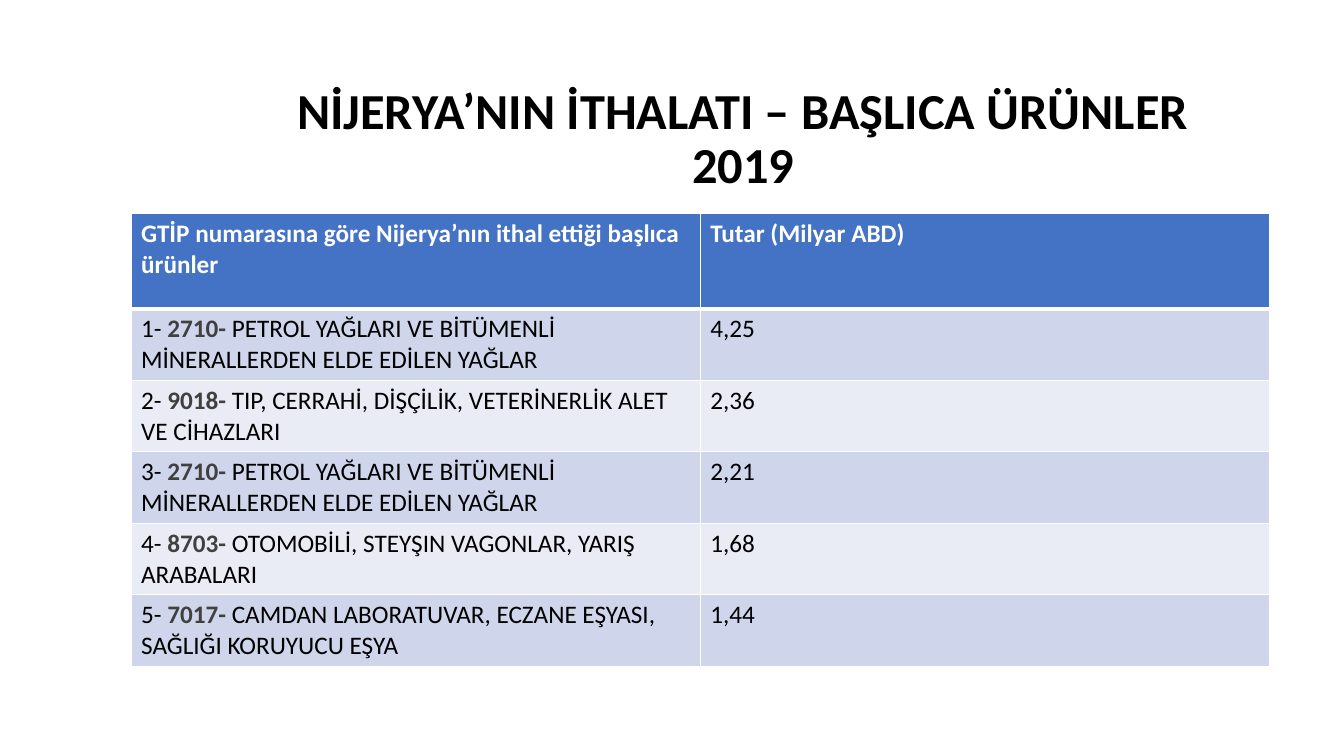
from dataclasses import dataclass

from lxml.etree import SubElement
from pptx import Presentation
from pptx.dml.color import RGBColor
from pptx.enum.text import MSO_ANCHOR, PP_ALIGN
from pptx.oxml.ns import qn
from pptx.util import Inches, Pt

PAGE_WIDTH, PAGE_HEIGHT = Inches(13.33), Inches(7.5)


@dataclass(frozen=True)
class Theme:
    font: str = "Calibri"
    title_size: int = 36
    table_size: int = 18
    ink: str = "000000"
    code_ink: str = "404040"
    white: str = "FFFFFF"
    header_fill: str = "4472C4"
    bands: tuple[str, str] = ("CFD5EA", "E9EBF5")
    border: int = 1
    header_border: int = 3


@dataclass(frozen=True)
class Area:
    """A rectangle in shares of the slide's width and height."""
    left: float
    top: float
    width: float
    height: float

    def lengths(self) -> tuple[int, int, int, int]:
        return (int(self.left * PAGE_WIDTH), int(self.top * PAGE_HEIGHT),
                int(self.width * PAGE_WIDTH), int(self.height * PAGE_HEIGHT))


@dataclass(frozen=True)
class Product:
    code: str
    name: str
    amount: str


THEME = Theme()
TITLE_AREA = Area(0.1718, 0.1067, 0.7622, 0.12)
TABLE_AREA = Area(0.0975, 0.2827, 0.847, 0.5987)
HEADER_SHARE = 0.21  # of the table's height

TITLE = "NİJERYA’NIN İTHALATI – BAŞLICA ÜRÜNLER 2019"
HEADINGS = ("GTİP numarasına göre Nijerya’nın ithal ettiği başlıca ürünler",
            "Tutar (Milyar ABD)")
OILS = "PETROL YAĞLARI VE BİTÜMENLİ MİNERALLERDEN ELDE EDİLEN YAĞLAR"
PRODUCTS = (
    Product("2710", OILS, "4,25"),
    Product("9018", "TIP, CERRAHİ, DİŞÇİLİK, VETERİNERLİK ALET VE CİHAZLARI", "2,36"),
    Product("2710", OILS, "2,21"),
    Product("8703", "OTOMOBİLİ, STEYŞIN VAGONLAR, YARIŞ ARABALARI", "1,68"),
    Product("7017", "CAMDAN LABORATUVAR, ECZANE EŞYASI, SAĞLIĞI KORUYUCU EŞYA", "1,44"),
)


def add_text(para, text: str, *, size: int = THEME.table_size,
             color: str = THEME.ink, bold: bool = False) -> None:
    span = para.add_run()
    span.text = text
    span.font.name = THEME.font
    span.font.size = Pt(size)
    span.font.bold = bold
    span.font.color.rgb = RGBColor.from_string(color)


def style_cell(cell, fill: str, top: int, bottom: int) -> None:
    properties = cell._tc.get_or_add_tcPr()
    edges = {"lnL": THEME.border, "lnR": THEME.border, "lnT": top, "lnB": bottom}
    for edge, points in edges.items():
        line = SubElement(properties, qn(f"a:{edge}"), w=str(Pt(points)))
        solid = SubElement(line, qn("a:solidFill"))
        SubElement(solid, qn("a:srgbClr"), val=THEME.white)
    cell.fill.solid()
    cell.fill.fore_color.rgb = RGBColor.from_string(fill)


def add_title(page) -> None:
    frame = page.shapes.add_textbox(*TITLE_AREA.lengths()).text_frame
    frame.word_wrap = True
    frame.vertical_anchor = MSO_ANCHOR.TOP
    para = frame.paragraphs[0]
    para.alignment = PP_ALIGN.CENTER
    para.line_spacing = 0.9
    add_text(para, TITLE, size=THEME.title_size, bold=True)


def add_product_table(page) -> None:
    left, top, width, height = TABLE_AREA.lengths()
    table = page.shapes.add_table(len(PRODUCTS) + 1, len(HEADINGS),
                                  left, top, width, height).table
    header_height = int(height * HEADER_SHARE)
    table.rows[0].height = header_height
    for row in list(table.rows)[1:]:
        row.height = (height - header_height) // len(PRODUCTS)

    # Header row
    for column, heading in enumerate(HEADINGS):
        cell = table.cell(0, column)
        style_cell(cell, THEME.header_fill, THEME.border, THEME.header_border)
        add_text(cell.text_frame.paragraphs[0], heading, color=THEME.white, bold=True)

    # Banded product rows
    for number, product in enumerate(PRODUCTS, start=1):
        name_cell, amount_cell = table.cell(number, 0), table.cell(number, 1)
        edge = THEME.header_border if number == 1 else THEME.border
        for cell in (name_cell, amount_cell):
            style_cell(cell, THEME.bands[(number - 1) % 2], edge, THEME.border)
        para = name_cell.text_frame.paragraphs[0]
        add_text(para, f"{number}- ")
        add_text(para, f"{product.code}- ", color=THEME.code_ink, bold=True)
        add_text(para, product.name)
        add_text(amount_cell.text_frame.paragraphs[0], product.amount)


def main() -> None:
    deck = Presentation()
    deck.slide_width, deck.slide_height = PAGE_WIDTH, PAGE_HEIGHT
    page = deck.slides.add_slide(deck.slide_layouts[6])
    add_title(page)
    add_product_table(page)
    deck.save("out.pptx")


if __name__ == "__main__":
    main()
